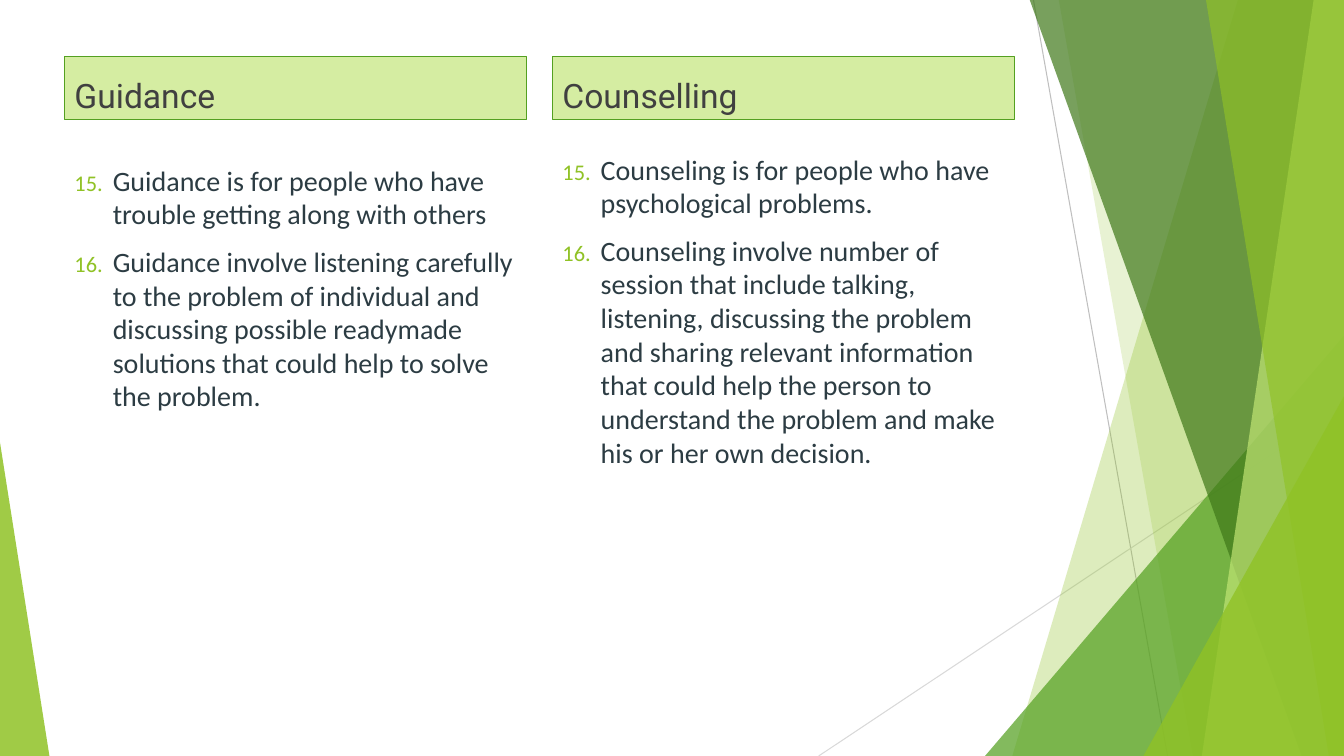
from lxml import etree
from pptx import Presentation
from pptx import util as u
from pptx.dml.color import RGBColor
from pptx.enum import shapes, text
from pptx.oxml.ns import qn

WIDTH, HEIGHT = 13.33, 7.5
LIME = RGBColor(0x90, 0xC2, 0x26)
GREEN = RGBColor(0x54, 0xA0, 0x21)
DARK_GREEN = RGBColor(0x3F, 0x78, 0x19)
PALE_LIME = RGBColor(0xC0, 0xE4, 0x74)
HEADER_FILL = RGBColor(0xD5, 0xED, 0xA2)
HEADER_TEXT = RGBColor(0x40, 0x40, 0x40)
BODY_TEXT = RGBColor(0x2C, 0x3C, 0x43)
GREY = RGBColor(0xBF, 0xBF, 0xBF)
LIGHT_GREY = RGBColor(0xD9, 0xD9, 0xD9)

COLUMNS = [
    (0.64, 1.57, "Guidance", [
        "Guidance is for people who have trouble getting along with others",
        "Guidance involve listening carefully to the problem of individual and "
        "discussing possible readymade solutions that could help to solve the problem.",
    ]),
    (5.48, 1.46, "Counselling", [
        "Counseling is for people who have psychological problems.",
        "Counseling involve number of session that include talking, listening, "
        "discussing the problem and sharing relevant information that could help "
        "the person to understand the problem and make his or her own decision.",
    ]),
]
COLUMN_WIDTH = 4.58


def add_number(paragraph, start, color):
    properties = paragraph._p.get_or_add_pPr()
    properties.set("marL", str(u.Inches(0.38)))
    properties.set("indent", str(-u.Inches(0.38)))
    bullet_color = etree.SubElement(properties, qn("a:buClr"))
    etree.SubElement(bullet_color, qn("a:srgbClr"), val=str(color))
    etree.SubElement(properties, qn("a:buSzPct"), val="80000")
    etree.SubElement(properties, qn("a:buAutoNum"), type="arabicPeriod", startAt=str(start))


def write_text(frame, lines, font, size, color, anchor=text.MSO_ANCHOR.TOP, start=None):
    frame.word_wrap = True
    frame.vertical_anchor = anchor
    for index, line in enumerate(lines):
        paragraph = frame.add_paragraph() if index else frame.paragraphs[0]
        paragraph.alignment = text.PP_ALIGN.LEFT
        paragraph.space_before = u.Pt(10)
        if start is not None:
            add_number(paragraph, start, LIME)
        run = paragraph.add_run()
        run.text = line
        run.font.name = font
        run.font.size = u.Pt(size)
        run.font.color.rgb = color


class SlideBuilder:
    def __init__(self, slide):
        self.slide = slide
        self.shapes = slide.shapes
        self.line_width = u.Pt(0.75)

    def paint(self, shape, color, opacity=100):
        shape.shadow.inherit = False
        shape.fill.solid()
        shape.fill.fore_color.rgb = color
        shape.line.fill.background()
        if opacity < 100:
            fill = shape._element.spPr.find(qn("a:solidFill"))
            etree.SubElement(fill[0], qn("a:alpha"), val=str(opacity * 1000))

    def line(self, start, end, color):
        connector = self.shapes.add_connector(
            shapes.MSO_CONNECTOR.STRAIGHT, *map(u.Inches, start + end))
        connector.line.color.rgb = color
        connector.line.width = self.line_width
        etree.SubElement(connector._element.spPr, qn("a:effectLst"))

    def band(self, top_x, bottom_x, color, opacity):
        top = -0.01
        builder = self.shapes.build_freeform(
            u.Inches(top_x), u.Inches(top))
        corners = [(WIDTH, top), (WIDTH, HEIGHT), (bottom_x, HEIGHT)]
        builder.add_line_segments([(u.Inches(x), u.Inches(y)) for x, y in corners])
        self.paint(builder.convert_to_shape(), color, opacity)

    def triangle(self, left, top, width, apex, color, opacity):
        shape = self.shapes.add_shape(
            shapes.MSO_SHAPE.ISOSCELES_TRIANGLE,
            *map(u.Inches, (left, top, width, HEIGHT - top)))
        shape.adjustments[0] = apex
        self.paint(shape, color, opacity)

    def header(self, left, caption):
        shape = self.shapes.add_shape(
            shapes.MSO_SHAPE.RECTANGLE,
            *map(u.Inches, (left, 0.56, COLUMN_WIDTH, 0.63)))
        self.paint(shape, HEADER_FILL)
        shape.line.color.rgb = GREEN
        shape.line.width = self.line_width
        write_text(shape.text_frame, [caption], font="Roboto", size=24,
                   color=HEADER_TEXT, anchor=text.MSO_ANCHOR.BOTTOM)

    def numbered_list(self, left, top, items):
        box = self.shapes.add_textbox(
            *map(u.Inches, (left, top, COLUMN_WIDTH, 5.71)))
        write_text(box.text_frame, items, font="Calibri", size=20,
                   color=BODY_TEXT, start=15)


def main():
    presentation = Presentation()
    presentation.slide_width = u.Inches(WIDTH)
    presentation.slide_height = u.Inches(HEIGHT)
    builder = SlideBuilder(presentation.slides.add_slide(presentation.slide_layouts[6]))

    builder.line((10.25, 0), (11.58, HEIGHT), GREY)
    builder.line((WIDTH, 4.03), (8.12, HEIGHT), LIGHT_GREY)
    builder.band(12.28, 10.04, LIME, 30)
    builder.band(10.5, 11.83, LIME, 20)
    builder.triangle(9.77, 3.33, 3.56, 1, GREEN, 72)
    builder.band(10.21, 12.91, DARK_GREEN, 70)
    builder.band(13.03, 11.92, PALE_LIME, 70)
    builder.band(11.96, 13.18, LIME, 65)
    builder.triangle(11.34, 3.93, 1.99, 1, LIME, 80)
    builder.triangle(0, 4.39, 0.49, 0, LIME, 85)

    for left, list_top, caption, items in COLUMNS:
        builder.numbered_list(left, list_top, items)
        builder.header(left, caption)

    presentation.save("out.pptx")


if __name__ == "__main__":
    main()
